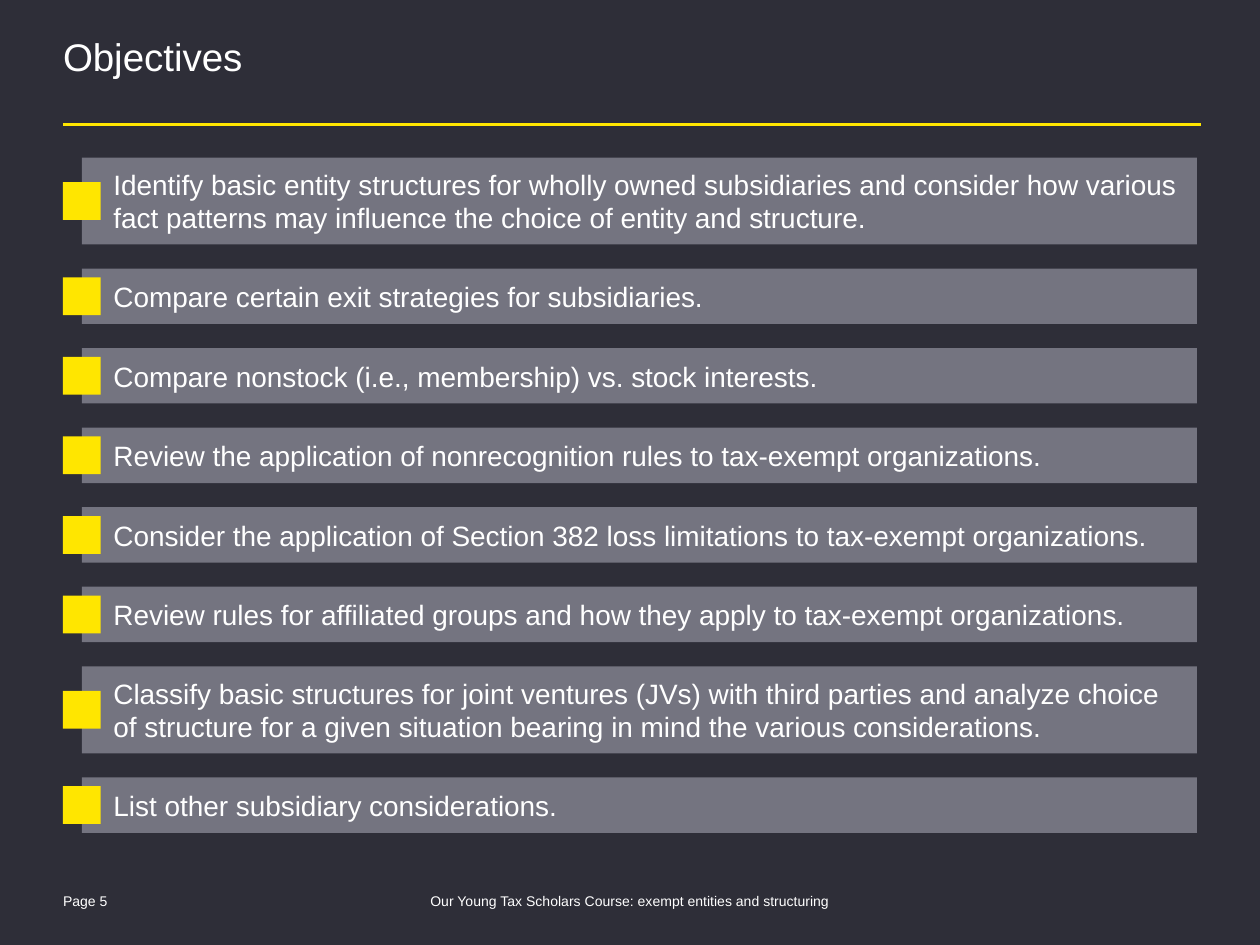
from dataclasses import dataclass

import pptx
import pptx.dml.color
import pptx.enum.shapes
import pptx.enum.text
import pptx.oxml
import pptx.oxml.ns
import pptx.util
from pptx.util import Inches

RGB = pptx.dml.color.RGBColor.from_string
ALIGN = pptx.enum.text.PP_ALIGN
ANCHOR = pptx.enum.text.MSO_ANCHOR
RECTANGLE = pptx.enum.shapes.MSO_SHAPE.RECTANGLE


@dataclass(frozen=True)
class Theme:
    """Colours, font and type sizes of the slide."""
    background: str = "2E2E38"
    bar: str = "747480"
    accent: str = "FFE600"
    text: str = "FFFFFF"
    font: str = "Arial"
    title_size: int = 22
    body_size: int = 16
    footer_size: int = 8


THEME = Theme()
OBJECTIVES = [
    ("Identify basic entity structures for wholly owned subsidiaries and consider how various "
     "fact patterns may influence the choice of entity and structure.", 2),
    ("Compare certain exit strategies for subsidiaries.", 1),
    ("Compare nonstock (i.e., membership) vs. stock interests.", 1),
    ("Review the application of nonrecognition rules to tax-exempt organizations.", 1),
    ("Consider the application of Section 382 loss limitations to tax-exempt organizations.", 1),
    ("Review rules for affiliated groups and how they apply to tax-exempt organizations.", 1),
    ("Classify basic structures for joint ventures (JVs) with third parties and analyze choice "
     "of structure for a given situation bearing in mind the various considerations.", 2),
    ("List other subsidiary considerations.", 1),
]
BAR_HEIGHTS = {1: Inches(0.44), 2: Inches(0.69)}


def write(shape, text, size, margins, anchor=ANCHOR.TOP, align=ALIGN.LEFT):
    """Fill a shape with one formatted paragraph and return the paragraph."""
    frame = shape.text_frame
    frame.word_wrap = True
    frame.auto_size = pptx.enum.text.MSO_AUTO_SIZE.NONE
    frame.vertical_anchor = anchor
    (frame.margin_left, frame.margin_top,
     frame.margin_right, frame.margin_bottom) = map(Inches, margins)
    frame.text = text
    paragraph = frame.paragraphs[0]
    paragraph.alignment = align
    paragraph.font.name = THEME.font
    paragraph.font.size = pptx.util.Pt(size)
    paragraph.font.color.rgb = RGB(THEME.text)
    return paragraph


def add_block(shapes, box, color):
    """Add a flat rectangle."""
    block = shapes.add_shape(RECTANGLE, *box)
    block.shadow.inherit = False
    block.fill.solid()
    block.fill.fore_color.rgb = RGB(color)
    block.line.fill.background()
    return block


def add_header(slide, left, top, width, height):
    """Place the title and the rule beneath it."""
    title = slide.shapes.title
    title.left, title.top, title.width, title.height = left, top, width, height
    write(title, "Objectives", THEME.title_size, (0, 0, 0, 0)).line_spacing = 0.85
    rule_y = top + height + Inches(0.02)
    rule = slide.shapes.add_connector(pptx.enum.shapes.MSO_CONNECTOR.STRAIGHT,
                                      left, rule_y, left + width + Inches(0.03), rule_y)
    rule.line.color.rgb = RGB(THEME.accent)
    rule.line.width = pptx.util.Pt(1.5)
    rule._element.spPr.append(pptx.oxml.parse_xml(
        f"<a:effectLst {pptx.oxml.ns.nsdecls('a')}/>"))


def add_objective(slide, text, left, top, width, height):
    """Place one grouped objective: a bar with a square straddling its left edge."""
    marker_size = Inches(0.3)
    group = slide.shapes.add_group_shape()
    bar_left = left + marker_size // 2
    bar = add_block(group.shapes, (bar_left, top, left + width - bar_left, height), THEME.bar)
    paragraph = write(bar, text, THEME.body_size, (0.05, 0.05, 0.1, 0.05), ANCHOR.MIDDLE)
    paragraph.space_after = pptx.util.Pt(6)
    indent = paragraph._p.get_or_add_pPr()
    indent.set("marL", str(Inches(0.2)))
    indent.set("indent", "0")
    marker_top = top + (height - marker_size) // 2
    add_block(group.shapes, (left, marker_top, marker_size, marker_size), THEME.accent)


def add_objectives(slide, left, top, width, height):
    """Stack the objectives with equal gaps to fill the box."""
    heights = [BAR_HEIGHTS[lines] for _, lines in OBJECTIVES]
    gap = (height - sum(heights)) // (len(heights) - 1)
    for (text, _), bar_height in zip(OBJECTIVES, heights):
        add_objective(slide, text, left, top, width, bar_height)
        top += bar_height + gap


def add_footer(slide, left, top, width, height):
    """Place the page number at the left and the program name in the centre."""
    program_width = Inches(4.42)
    parts = [
        ("Page 5", left, Inches(1.31), ALIGN.LEFT),
        ("Our Young Tax Scholars Course: exempt entities and structuring",
         left + (width - program_width) // 2, program_width, ALIGN.CENTER),
    ]
    for text, part_left, part_width, align in parts:
        label = slide.shapes.add_textbox(part_left, top, part_width, height)
        paragraph = write(label, text, THEME.footer_size, (0, 0.04, 0, 0), align=align)
        paragraph.line_spacing = 0.85
        paragraph.space_after = pptx.util.Pt(6)


def main():
    """Build and save the slide."""
    deck = pptx.Presentation()
    deck.slide_width, deck.slide_height = Inches(10), Inches(7.5)
    slide = deck.slides.add_slide(deck.slide_layouts[5])
    slide.background.fill.solid()
    slide.background.fill.fore_color.rgb = RGB(THEME.background)
    left, width = Inches(0.5), Inches(9)
    add_header(slide, left, Inches(0.32), width, Inches(0.65))
    add_objectives(slide, left, Inches(1.25), width, Inches(5.36))
    add_footer(slide, left, Inches(7.06), width, Inches(0.15))
    deck.save("out.pptx")


if __name__ == "__main__":
    main()
